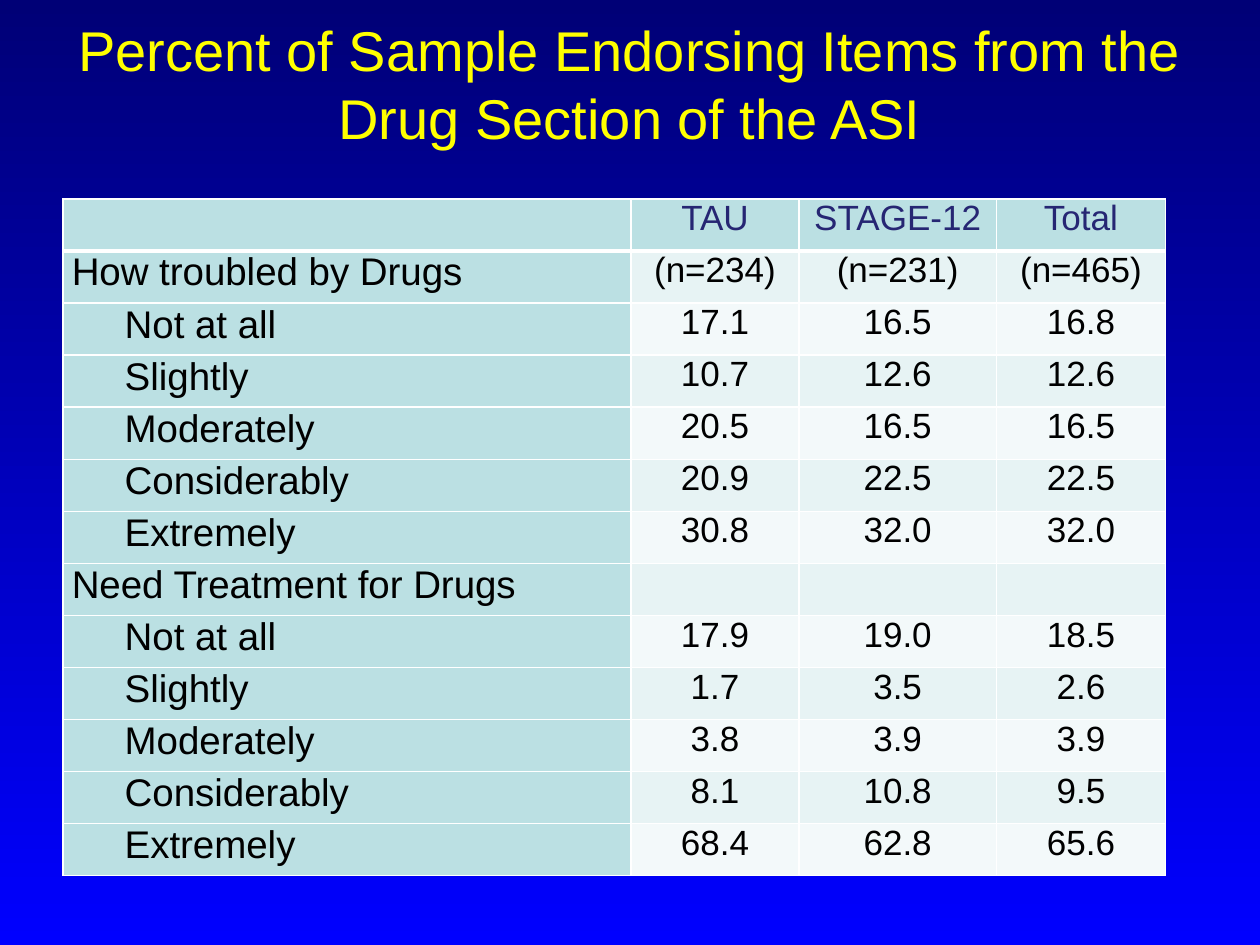
from lxml.etree import SubElement
from pptx import Presentation
from pptx.dml.color import RGBColor
from pptx.enum.text import MSO_ANCHOR as Anchor, MSO_AUTO_SIZE as AutoSize, PP_ALIGN as Align
from pptx.oxml.ns import qn
from pptx.util import Inches, Pt

NAVY = RGBColor(0x00, 0x00, 0x76)
BLUE = RGBColor(0x00, 0x00, 0xFF)
YELLOW = RGBColor(0xFF, 0xFF, 0x00)
INDIGO = RGBColor(0x26, 0x26, 0x73)
BLACK = RGBColor(0x00, 0x00, 0x00)
WHITE = RGBColor(0xFF, 0xFF, 0xFF)
TEAL = RGBColor(0xBB, 0xE0, 0xE3)
BANDS = (RGBColor(0xF3, 0xF9, 0xFA), RGBColor(0xE7, 0xF3, 0xF4))

TITLE = "Percent of Sample Endorsing Items from the Drug Section of the ASI"
HEADINGS = ("", "TAU", "STAGE-12", "Total")
LEVELS = ("Not at all", "Slightly", "Moderately", "Considerably", "Extremely")
QUESTIONS = (
    (("How troubled by Drugs", "(n=234)", "(n=231)", "(n=465)"),
     (("17.1", "16.5", "16.8"),
      ("10.7", "12.6", "12.6"),
      ("20.5", "16.5", "16.5"),
      ("20.9", "22.5", "22.5"),
      ("30.8", "32.0", "32.0"))),
    (("Need Treatment for Drugs", "", "", ""),
     (("17.9", "19.0", "18.5"),
      ("1.7", "3.5", "2.6"),
      ("3.8", "3.9", "3.9"),
      ("8.1", "10.8", "9.5"),
      ("68.4", "62.8", "65.6"))),
)
COLUMN_WIDTHS = (4.51, 1.33, 1.57, 1.34)
LEVEL_INDENT = Inches(0.42)
CELL_FORMAT = {"margin_left": Inches(0.07), "margin_right": Inches(0.07),
               "margin_top": 0, "margin_bottom": 0}


def set_attributes(target, values):
    for name, value in values.items():
        setattr(target, name, value)


def style_text(paragraph, size, color, align):
    paragraph.alignment = align
    set_attributes(paragraph.font, {"name": "Arial", "size": Pt(size), "bold": False})
    paragraph.font.color.rgb = color


def paint_background(slide):
    fill = slide.background.fill
    fill.gradient()
    fill.gradient_angle = 270
    for stop, color in zip(fill.gradient_stops, (NAVY, BLUE)):
        stop.color.rgb = color


def place_title(slide, left, top, width, height):
    title = slide.shapes.title
    set_attributes(title, {"left": left, "top": top, "width": width, "height": height})
    frame = title.text_frame
    frame.text = TITLE
    set_attributes(frame, {"word_wrap": True, "auto_size": AutoSize.NONE,
                           "vertical_anchor": Anchor.MIDDLE,
                           "margin_bottom": Inches(0.58)})
    style_text(frame.paragraphs[0], 32, YELLOW, Align.CENTER)


def draw_borders(cell, bottom_width):
    properties = cell._tc.get_or_add_tcPr()
    edges = (("lnL", 1), ("lnR", 1), ("lnT", 1), ("lnB", bottom_width))
    for position, (edge, width) in enumerate(edges):
        line = SubElement(properties, qn(f"a:{edge}"), w=str(Pt(width)))
        SubElement(SubElement(line, qn("a:solidFill")), qn("a:srgbClr"), val=str(WHITE))
        properties.insert(position, line)


def survey_rows():
    """Return (texts, is_level) for every table row."""
    rows = [(HEADINGS, False)]
    for question, percents in QUESTIONS:
        rows.append((question, False))
        rows += [((level, *values), True) for level, values in zip(LEVELS, percents)]
    return rows


def fill_cell(cell, text, row, column, is_level):
    is_header, is_label = row == 0, column == 0
    set_attributes(cell, CELL_FORMAT)
    cell.fill.solid()
    cell.fill.fore_color.rgb = TEAL if is_header or is_label else BANDS[row % 2]
    draw_borders(cell, 3 if is_header else 1)
    cell.text = text
    paragraph = cell.text_frame.paragraphs[0]
    style_text(paragraph, 22 if is_label else 20, INDIGO if is_header else BLACK,
               Align.LEFT if is_label else Align.CENTER)
    if is_level and is_label:
        paragraph._p.get_or_add_pPr().set("marL", str(LEVEL_INDENT))


def place_survey_table(slide, left, top, width, height):
    rows = survey_rows()
    table = slide.shapes.add_table(len(rows), len(HEADINGS), left, top, width, height).table
    set_attributes(table, {"first_row": False, "horz_banding": False})
    for column, column_width in zip(table.columns, COLUMN_WIDTHS):
        column.width = Inches(column_width)
    for row, (texts, is_level) in enumerate(rows):
        for column, text in enumerate(texts):
            fill_cell(table.cell(row, column), text, row, column, is_level)


def main():
    deck = Presentation()
    set_attributes(deck, {"slide_width": Inches(10), "slide_height": Inches(7.5)})
    slide = deck.slides.add_slide(deck.slide_layouts[5])
    paint_background(slide)
    place_title(slide, Inches(0.5), Inches(0.3), Inches(9), Inches(1.25))
    place_survey_table(slide, Inches(0.5), Inches(1.58), Inches(8.75), Inches(5.37))
    deck.save("out.pptx")


if __name__ == "__main__":
    main()
